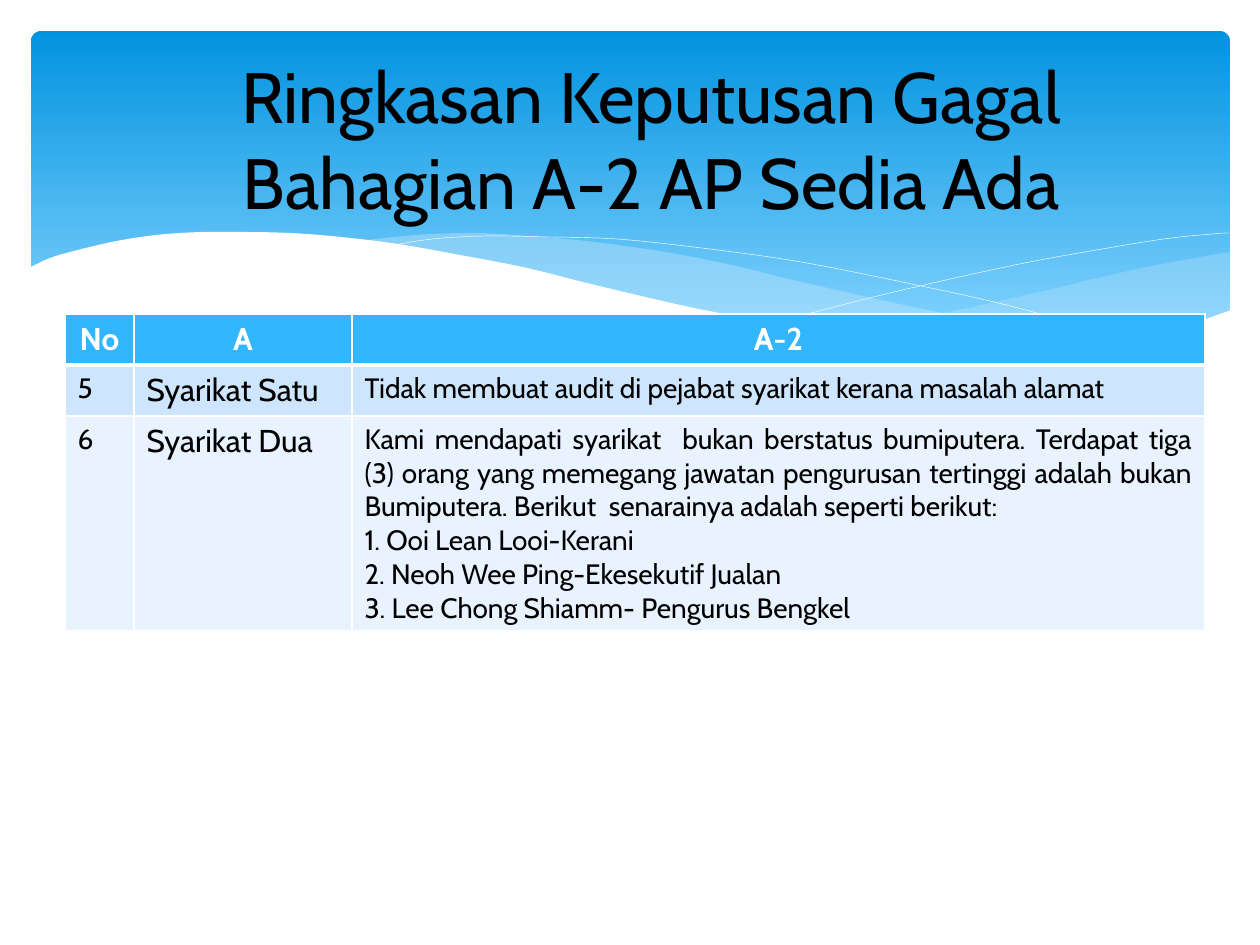
"""Builds a slide with a wave banner, a title and a table of failed audit results."""
from lxml import etree
from pptx import Presentation
from pptx import util as u
from pptx.dml.color import RGBColor
from pptx.enum import shapes, text
from pptx.oxml.ns import qn

PX = 914400 / 126
FONT = "Cabin"
BLACK = RGBColor(0x00, 0x00, 0x00)
WHITE = RGBColor(0xFF, 0xFF, 0xFF)
BANNER_TOP = RGBColor(0x02, 0x93, 0xE0)
BANNER_BOTTOM = RGBColor(0x83, 0xD3, 0xFE)
WAVE = RGBColor(0xC6, 0xE7, 0xFC)
ROW_FILLS = [RGBColor(0x31, 0xB6, 0xFD), RGBColor(0xCE, 0xE5, 0xFE), RGBColor(0xE8, 0xF3, 0xFF)]

TITLE = ["Ringkasan Keputusan Gagal", "Bahagian A-2 AP Sedia Ada"]
TABLE = [
    [["No"], ["A"], ["A-2"]],
    [["5"], ["Syarikat Satu"], ["Tidak membuat audit di pejabat syarikat kerana masalah alamat"]],
    [["6"], ["Syarikat Dua"], [
        "Kami mendapati syarikat  bukan berstatus bumiputera. Terdapat tiga (3) orang yang memegang "
        "jawatan pengurusan tertinggi adalah bukan Bumiputera. Berikut  senarainya adalah seperti berikut:",
        "1. Ooi Lean Looi-Kerani",
        "2. Neoh Wee Ping-Ekesekutif Jualan",
        "3. Lee Chong Shiamm- Pengurus Bengkel",
    ]],
]
TABLE_LEFT, TABLE_TOP = 65, 314
COLUMN_WIDTHS = [69, 218, 853]
ROW_HEIGHTS = [51, 51, 215]
BODY_SIZES = [16, 18, 16]
BODY_ALIGNMENTS = [text.PP_ALIGN.LEFT, text.PP_ALIGN.LEFT, text.PP_ALIGN.JUSTIFY]

RIGHT_WAVE = [
    [(1230, 252), (1178, 261), (1123, 272), (1048, 290), (949, 312), (833, 334)],
    [(833, 334), (888, 341), (954, 348), (1026, 350), (1087, 347), (1140, 339), (1187, 326), (1230, 311)],
]
MIDDLE_WAVE = [
    [(1125, 344), (1055, 334), (977, 320), (890, 302), (793, 280), (736, 266), (682, 255),
     (632, 247), (586, 241), (529, 236), (479, 233), (433, 234), (394, 237), (360, 241)],
    [(360, 241), (431, 251), (509, 266), (566, 280), (668, 302), (757, 321), (838, 335),
     (911, 343), (989, 349), (1068, 350), (1125, 344)],
]
FALLING_LINE = [[(389, 246), (433, 239), (487, 236), (546, 237), (616, 239), (701, 248),
                 (801, 262), (916, 285), (1002, 304), (1095, 329), (1143, 343)]]
RISING_LINE = [[(772, 324), (823, 310), (907, 289), (1015, 265), (1091, 251), (1164, 239),
                (1213, 234), (1229, 233)]]
WHITE_WAVE = [
    [(1231, 310), (1184, 326), (1133, 336), (1071, 345), (1002, 349), (938, 346), (867, 338),
     (789, 325), (699, 309), (599, 286), (527, 268), (460, 255), (398, 244), (341, 237), (290, 233),
     (243, 232), (203, 232), (166, 234), (134, 238), (107, 243), (74, 251), (50, 258), (29, 268)],
    [(29, 415), (1231, 415)],
]
CURVES = [
    (RIGHT_WAVE, WAVE, 29),
    (MIDDLE_WAVE, WAVE, 40),
    (FALLING_LINE, None, 100),
    (RISING_LINE, None, 100),
    (WHITE_WAVE, WHITE, 100),
]


def px(*lengths):
    return [u.Emu(round(length * PX)) for length in lengths]


def smooth(points, steps=4):
    padded = [points[0], *points, points[-1]]
    curve = [points[0]]
    for a, b, c, d in zip(padded, padded[1:], padded[2:], padded[3:]):
        for step in range(1, steps + 1):
            t = step / steps
            curve.append(tuple(
                (2 * q + (r - p) * t + (2 * p - 5 * q + 4 * r - s) * t ** 2
                 + (3 * q - p - 3 * r + s) * t ** 3) / 2
                for p, q, r, s in zip(a, b, c, d)))
    return curve


def add_banner(slide):
    banner = slide.shapes.add_shape(shapes.MSO_SHAPE.ROUNDED_RECTANGLE, *px(31, 31, 1199, 340))
    banner.adjustments[0] = 0.03
    banner.shadow.inherit = False
    banner.line.fill.background()
    banner.fill.gradient()
    banner.fill.gradient_angle = 270
    stops = banner.fill.gradient_stops
    for stop, color, position in zip(stops, (BANNER_TOP, BANNER_BOTTOM), (0, 0.9)):
        stop.color.rgb = color
        stop.position = position


def add_curve(slide, edges, color, opacity):
    points = [px(*point) for edge in edges for point in smooth(edge)]
    builder = slide.shapes.build_freeform(*points[0])
    builder.add_line_segments(points[1:], close=color is not None)
    shape = builder.convert_to_shape()
    shape.shadow.inherit = False
    if color is None:
        shape.fill.background()
        shape.line.color.rgb = WHITE
        shape.line.width = u.Pt(0.25)
        return
    shape.line.fill.background()
    shape.fill.solid()
    shape.fill.fore_color.rgb = color
    if opacity < 100:
        color_element = shape.fill._xPr.find(qn("a:solidFill"))[0]
        etree.SubElement(color_element, qn("a:alpha"), val=str(opacity * 1000))


def write(frame, lines, size, color, alignment, bold=False):
    frame.word_wrap = True
    for index, line in enumerate(lines):
        paragraph = frame.add_paragraph() if index else frame.paragraphs[0]
        paragraph.text = line
        paragraph.alignment = alignment
        font = paragraph.font
        font.name, font.size, font.bold = FONT, u.Pt(size), bold
        font.color.rgb = color


def add_borders(cell, row):
    properties = cell._tc.get_or_add_tcPr()
    for side in "LRTB":
        thick = (row, side) in ((0, "B"), (1, "T"))
        line = etree.SubElement(properties, qn(f"a:ln{side}"), w=str(u.Pt(3 if thick else 1)))
        fill = etree.SubElement(line, qn("a:solidFill"))
        etree.SubElement(fill, qn("a:srgbClr"), val=str(WHITE))


def add_results(slide):
    box = px(TABLE_LEFT, TABLE_TOP, sum(COLUMN_WIDTHS), sum(ROW_HEIGHTS))
    table = slide.shapes.add_table(len(ROW_HEIGHTS), len(COLUMN_WIDTHS), *box).table
    for column, width in zip(table.columns, px(*COLUMN_WIDTHS)):
        column.width = width
    for row, height in zip(table.rows, px(*ROW_HEIGHTS)):
        row.height = height
    for r, values in enumerate(TABLE):
        for c, lines in enumerate(values):
            cell = table.cell(r, c)
            add_borders(cell, r)
            cell.fill.solid()
            cell.fill.fore_color.rgb = ROW_FILLS[r]
            if r == 0:
                write(cell.text_frame, lines, 18, WHITE, text.PP_ALIGN.CENTER, bold=True)
            else:
                write(cell.text_frame, lines, BODY_SIZES[c], BLACK, BODY_ALIGNMENTS[c])


def main():
    presentation = Presentation()
    presentation.slide_width, presentation.slide_height = px(1260, 945)
    slide = presentation.slides.add_slide(presentation.slide_layouts[6])
    add_banner(slide)
    for edges, color, opacity in CURVES:
        add_curve(slide, edges, color, opacity)
    title = slide.shapes.add_textbox(*px(84, 59, 1134, 158)).text_frame
    title.vertical_anchor = text.MSO_ANCHOR.MIDDLE
    write(title, TITLE, 40.7, BLACK, text.PP_ALIGN.CENTER)
    add_results(slide)
    presentation.save("out.pptx")


if __name__ == "__main__":
    main()
